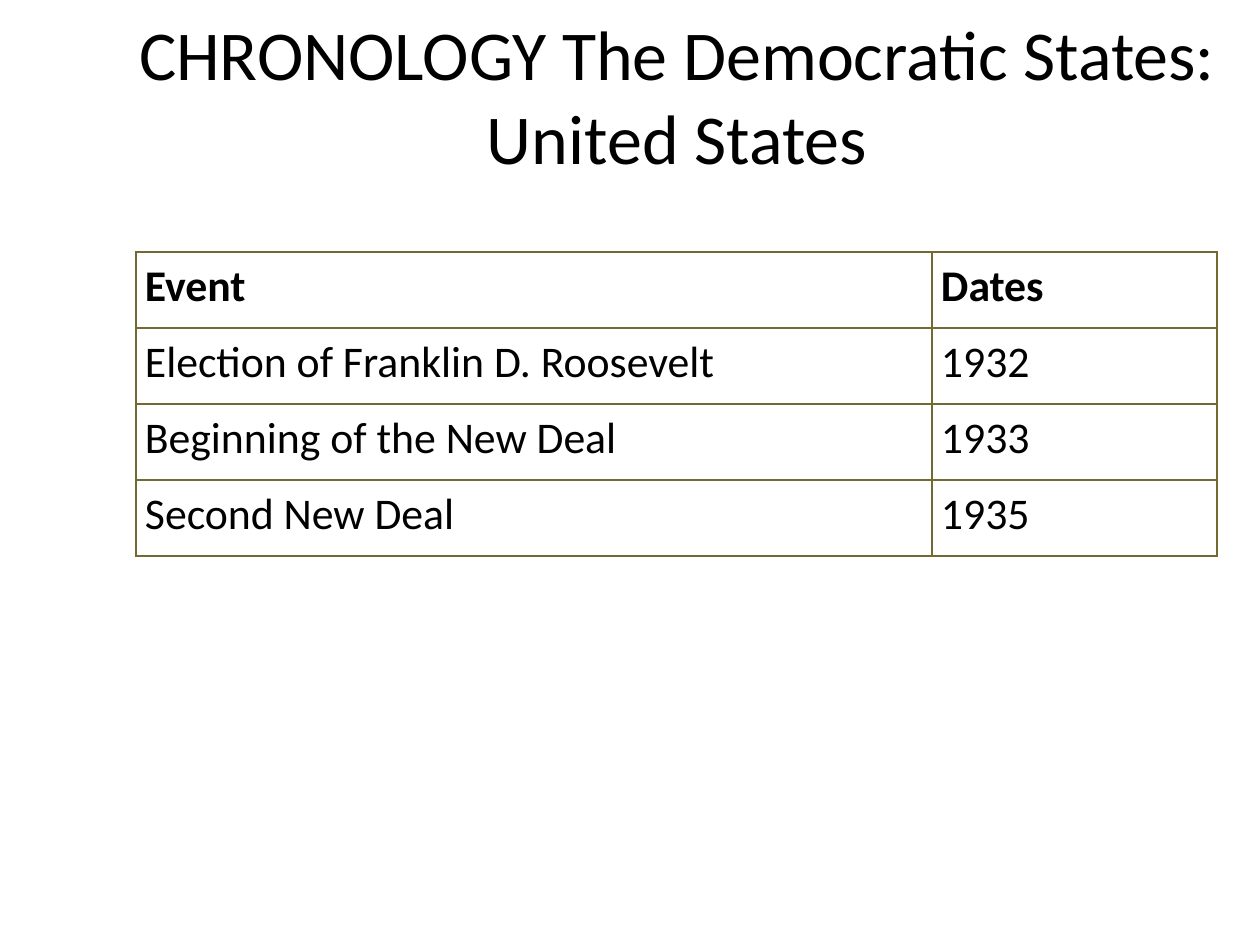
from dataclasses import dataclass

from lxml import etree
from pptx import Presentation
from pptx import util as u
from pptx.dml.color import RGBColor
from pptx.enum import text
from pptx.oxml import ns

PX = 914400 / 126
FONT = "Calibri"
BLACK = RGBColor(0x00, 0x00, 0x00)
WHITE = RGBColor(0xFF, 0xFF, 0xFF)
OLIVE = RGBColor(0x74, 0x68, 0x33)
COL_WIDTHS = (796, 285)
ROW_HEIGHT = 76


@dataclass(frozen=True)
class Entry:
    event: str
    date: str
    bold: bool = False


ENTRIES = (
    Entry("Event", "Dates", bold=True),
    Entry("Election of Franklin D. Roosevelt", "1932"),
    Entry("Beginning of the New Deal", "1933"),
    Entry("Second New Deal", "1935"),
)


def px(n: int) -> u.Emu:
    return u.Emu(round(n * PX))


def add_run(p, content: str, size: int, bold: bool = False) -> None:
    r = p.add_run()
    r.text = content
    r.font.name = FONT
    r.font.size = u.Pt(size)
    r.font.bold = bold
    r.font.color.rgb = BLACK


def add_borders(cell, color: RGBColor) -> None:
    tc_pr = cell._tc.get_or_add_tcPr()
    for side in ("lnL", "lnR", "lnT", "lnB"):
        ln = etree.SubElement(tc_pr, ns.qn(f"a:{side}"), w=str(u.Pt(1)))
        fill = etree.SubElement(ln, ns.qn("a:solidFill"))
        etree.SubElement(fill, ns.qn("a:srgbClr"), val=str(color))


def fill_cell(cell, content: str, bold: bool) -> None:
    add_borders(cell, OLIVE)
    cell.fill.solid()
    cell.fill.fore_color.rgb = WHITE
    cell.margin_left = cell.margin_right = px(9)
    cell.margin_top = cell.margin_bottom = 0
    p = cell.text_frame.paragraphs[0]
    p.line_spacing = 1.15
    add_run(p, content, 25, bold)


def set_title(sp, content: str) -> None:
    sp.left, sp.top, sp.width, sp.height = px(94), px(63), px(1166), px(63)
    tf = sp.text_frame
    tf.word_wrap = True
    tf.auto_size = text.MSO_AUTO_SIZE.NONE
    tf.vertical_anchor = text.MSO_ANCHOR.MIDDLE
    p = tf.paragraphs[0]
    p.alignment = text.PP_ALIGN.CENTER
    add_run(p, content, 40)


def add_chronology(s, entries: tuple[Entry, ...]) -> None:
    table = s.shapes.add_table(
        len(entries), len(COL_WIDTHS), px(136), px(252),
        px(sum(COL_WIDTHS)), px(ROW_HEIGHT * len(entries)),
    ).table
    table.horz_banding = False
    for col, width in zip(table.columns, COL_WIDTHS):
        col.width = px(width)
    for row, entry in zip(table.rows, entries):
        row.height = px(ROW_HEIGHT)
        for cell, content in zip(row.cells, (entry.event, entry.date)):
            fill_cell(cell, content, entry.bold)


def main() -> None:
    prs = Presentation()
    prs.slide_width, prs.slide_height = px(1260), px(945)
    s = prs.slides.add_slide(prs.slide_layouts[5])
    set_title(s.shapes.title, "CHRONOLOGY The Democratic States: United States")
    add_chronology(s, ENTRIES)
    prs.save("out.pptx")


if __name__ == "__main__":
    main()
